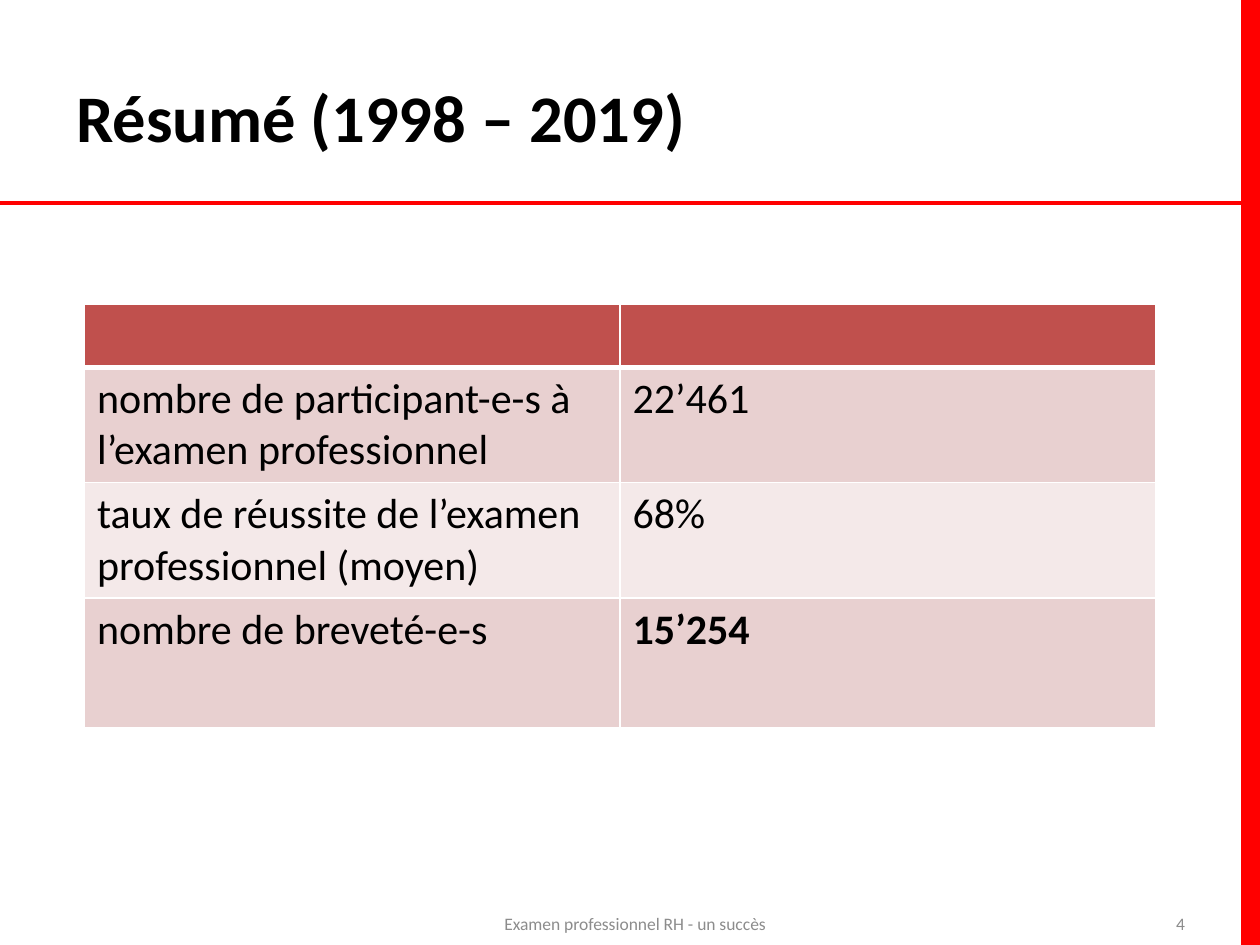
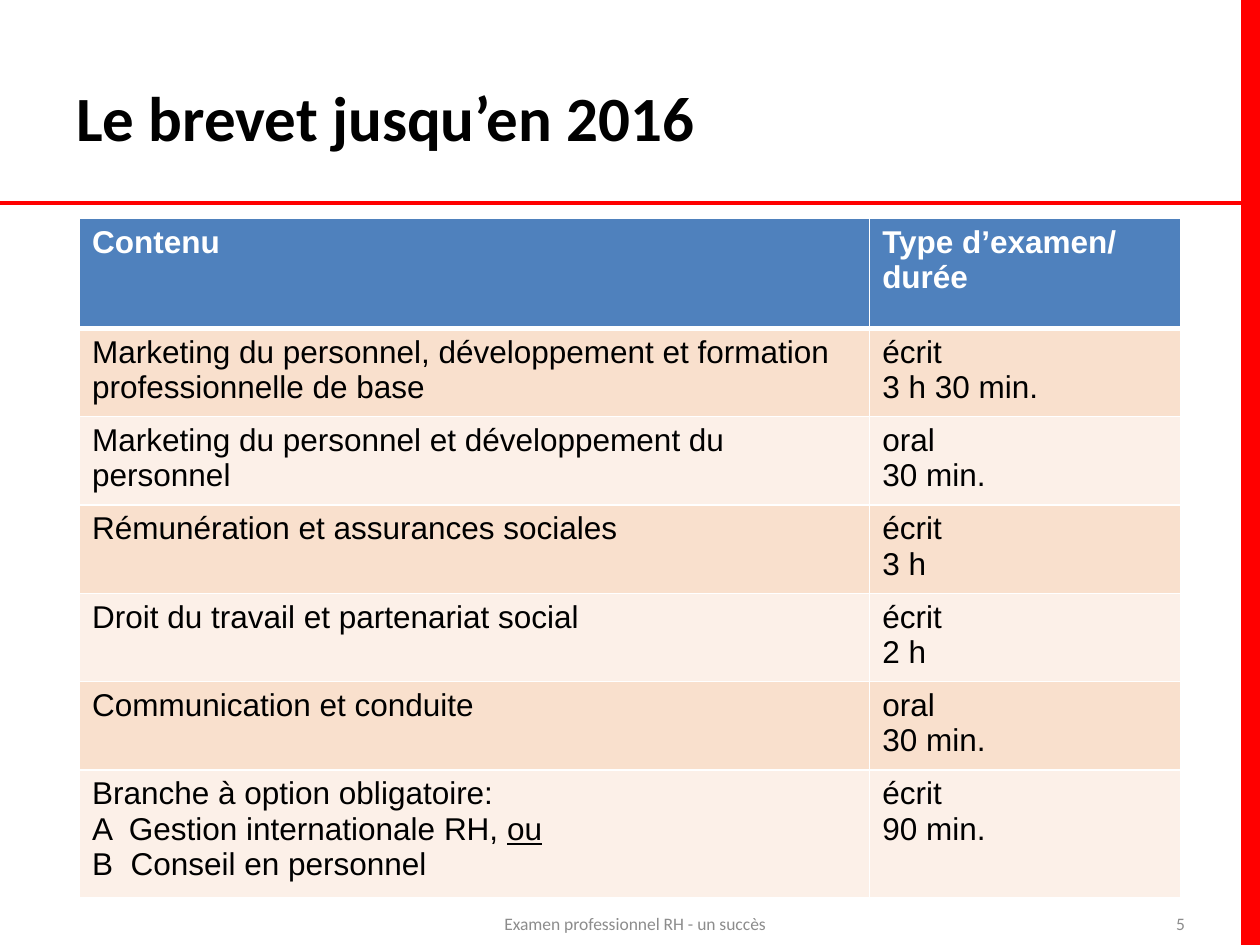
from dataclasses import dataclass

from lxml.etree import SubElement
from pptx import Presentation
from pptx.dml.color import RGBColor
from pptx.enum.shapes import MSO_CONNECTOR as CONN, MSO_SHAPE as SHAPE
from pptx.enum.text import MSO_ANCHOR as ANCHOR, PP_ALIGN as ALIGN
from pptx.oxml import parse_xml
from pptx.oxml.ns import nsdecls, qn
from pptx.util import Pt


@dataclass(frozen=True)
class Theme:
    red: str = "FF0000"
    black: str = "000000"
    white: str = "FFFFFF"
    grey: str = "8C8C8C"
    font: str = "Calibri"
    footer_size: int = 10
    rule_width: float = 2.25
    border: int = 1
    header_border: int = 3


@dataclass(frozen=True)
class TableStyle:
    header: str
    bands: tuple
    font: str
    size: int


THEME = Theme()
SUMMARY_STYLE = TableStyle("C0504D", ("E8D0D0", "F4E9E9"), "Calibri", 24)
EXAM_STYLE = TableStyle("4F81BD", ("F9E0CD", "FCF0E8"), "Arial", 18)

WIDTH, HEIGHT = 720, 540
BAR_LEFT = 710
RULE_TOP = 116
FOOTER = "Examen professionnel RH - un succès"

SUMMARY = [
    ["", ""],
    ["nombre de participant-e-s à l’examen professionnel", "22’461"],
    ["taux de réussite de l’examen professionnel (moyen)", "68%"],
    ["nombre de breveté-e-s", [[("15’254", "bold")]]],
]
EXAMS = [
    ["Contenu", ["Type d’examen/", "durée"]],
    ["Marketing du personnel, développement et formation professionnelle de base",
     ["écrit", "3 h 30 min."]],
    ["Marketing du personnel et développement du personnel", ["oral", "30 min."]],
    ["Rémunération et assurances sociales", ["écrit", "3 h"]],
    ["Droit du travail et partenariat social", ["écrit", "2 h"]],
    ["Communication et conduite", ["oral", "30 min."]],
    [["Branche à option obligatoire:",
      ["A  Gestion internationale RH, ", ("ou", "underline")],
      "B  Conseil en personnel"],
     ["écrit", "90 min."]],
]


def rgb(color):
    return RGBColor.from_string(color)


def as_list(value):
    return value if isinstance(value, list) else [value]


def write(tf, content, font, size, color, bold=False, align=ALIGN.LEFT):
    for i, runs in enumerate(as_list(content)):
        p = tf.paragraphs[0] if i == 0 else tf.add_paragraph()
        p.alignment = align
        p.font.size = Pt(size)
        for run in as_list(runs):
            text, mark = run if isinstance(run, tuple) else (run, None)
            if not text:
                continue
            r = p.add_run()
            r.text = text
            r.font.name, r.font.size = font, Pt(size)
            r.font.color.rgb = rgb(color)
            r.font.bold = bold or mark == "bold"
            if mark == "underline":
                r.font.underline = True


def add_frame(s):
    bar = s.shapes.add_shape(SHAPE.RECTANGLE, Pt(BAR_LEFT), 0,
                             Pt(WIDTH - BAR_LEFT), Pt(HEIGHT))
    bar.shadow.inherit = False
    bar.fill.solid()
    bar.fill.fore_color.rgb = rgb(THEME.red)
    bar.line.color.rgb = rgb(THEME.red)
    bar.line.width = Pt(2)
    rule = s.shapes.add_connector(CONN.STRAIGHT, 0, Pt(RULE_TOP),
                                  Pt(BAR_LEFT), Pt(RULE_TOP))
    rule.line.color.rgb = rgb(THEME.red)
    rule.line.width = Pt(THEME.rule_width)
    SubElement(rule._element.spPr, qn("a:effectLst"))


def add_footer_text(s, text, left, width, align):
    sp = s.shapes.add_textbox(Pt(left), Pt(513.4), Pt(width), Pt(28.8))
    tf = sp.text_frame
    tf.word_wrap = True
    tf.vertical_anchor = ANCHOR.MIDDLE
    write(tf, text, THEME.font, THEME.footer_size, THEME.grey, align=align)


def add_titled_slide(prs, title, size, number):
    s = prs.slides.add_slide(prs.slide_layouts[5])
    add_frame(s)
    sp = s.shapes.title
    sp.left, sp.top, sp.width, sp.height = Pt(36.4), Pt(21.3), Pt(648), Pt(90)
    sp.text_frame.vertical_anchor = ANCHOR.MIDDLE
    write(sp.text_frame, title, THEME.font, size, THEME.black, bold=True)
    add_footer_text(s, FOOTER, 235.4, 255, ALIGN.CENTER)
    add_footer_text(s, str(number), 516.2, 168, ALIGN.RIGHT)
    return s


def set_borders(cell, top, bottom):
    tc_pr = cell._tc.get_or_add_tcPr()
    sides = [("L", THEME.border), ("R", THEME.border), ("T", top), ("B", bottom)]
    for i, (side, width) in enumerate(sides):
        tc_pr.insert(i, parse_xml(
            f'<a:ln{side} {nsdecls("a")} w="{Pt(width)}"><a:solidFill>'
            f'<a:srgbClr val="{THEME.white}"/></a:solidFill></a:ln{side}>'))


def add_grid(s, rows, left, top, widths, heights, style):
    table = s.shapes.add_table(len(rows), len(widths), Pt(left), Pt(top),
                               Pt(sum(widths)), Pt(sum(heights))).table
    for col, width in zip(table.columns, widths):
        col.width = Pt(width)
    for i, (row, height) in enumerate(zip(rows, heights)):
        table.rows[i].height = Pt(height)
        header = i == 0
        fill = style.header if header else style.bands[(i - 1) % 2]
        color = THEME.white if header else THEME.black
        above = THEME.header_border if i == 1 else THEME.border
        below = THEME.header_border if header else THEME.border
        for j, content in enumerate(row):
            cell = table.cell(i, j)
            cell.fill.solid()
            cell.fill.fore_color.rgb = rgb(fill)
            set_borders(cell, above, below)
            write(cell.text_frame, content, style.font, style.size, color, bold=header)


def main():
    prs = Presentation()
    prs.slide_width, prs.slide_height = Pt(WIDTH), Pt(HEIGHT)

    s = add_titled_slide(prs, "Résumé (1998 – 2019)", 38, 4)
    add_grid(s, SUMMARY, 48.3, 173.8, [306, 306], [35.4, 66, 66, 74], SUMMARY_STYLE)

    s = add_titled_slide(prs, "Le brevet jusqu’en 2016", 36, 5)
    add_grid(s, EXAMS, 45.5, 124.8, [451.5, 177.7],
             [62.8] + [50.5] * 5 + [73], EXAM_STYLE)

    prs.save("out.pptx")


if __name__ == "__main__":
    main()
